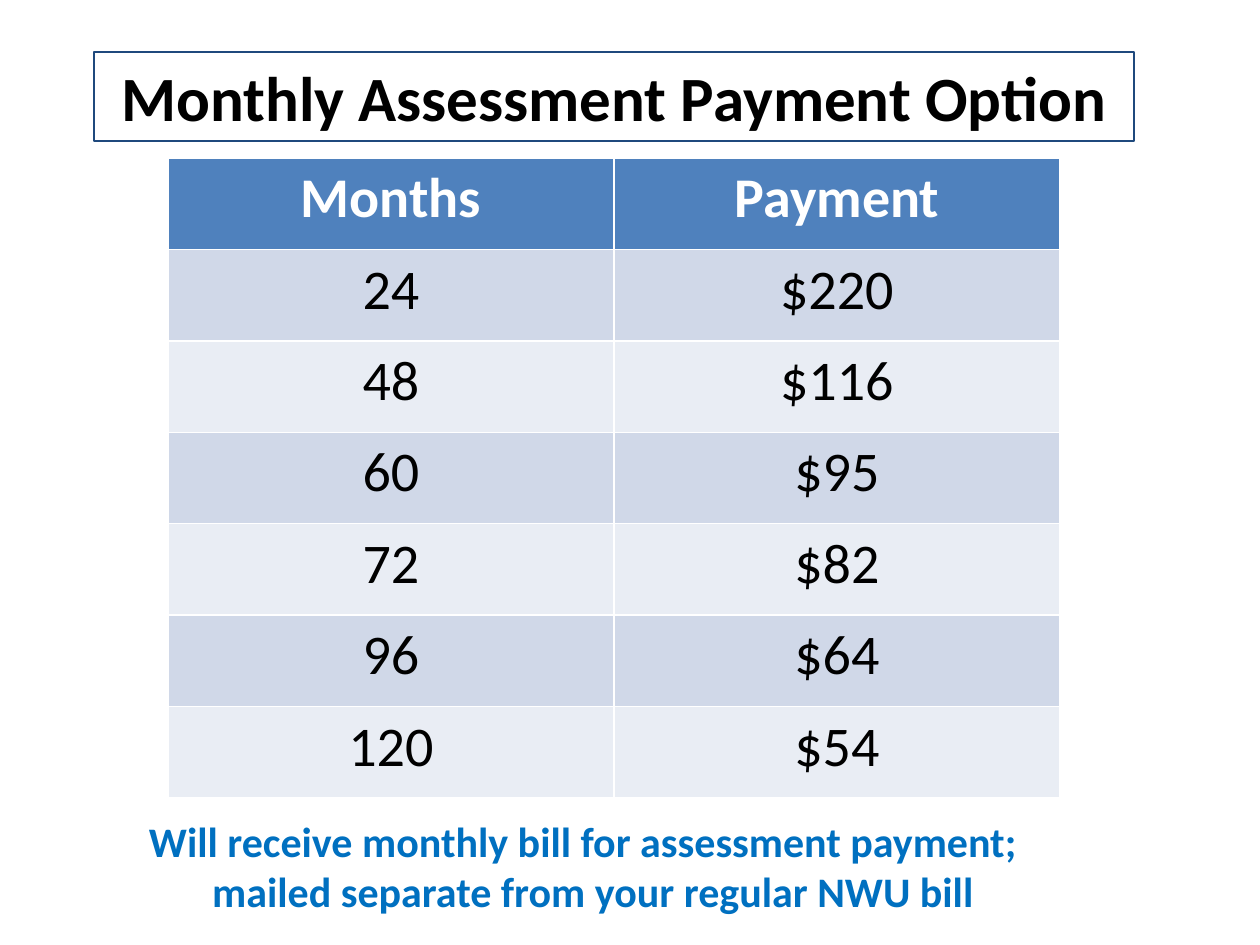
from dataclasses import dataclass

from pptx import Presentation
from pptx.dml.color import RGBColor
from pptx.enum.shapes import MSO_SHAPE as Shape
from pptx.enum.text import MSO_ANCHOR as Anchor, PP_ALIGN as Align
from pptx.util import Emu, Pt


@dataclass(frozen=True)
class Theme:
    font: str = "Calibri"
    title_size: int = 36
    table_size: int = 32
    note_size: int = 24
    black: str = "000000"
    white: str = "FFFFFF"
    outline: str = "1F497D"
    header: str = "4F81BD"
    bands: tuple = ("D0D8E8", "E9EDF4")
    note: str = "0070C0"


theme = Theme()


def px(count):
    return Emu(round(count * 914400 / 126))


def write(paragraph, text, size, color, bold=True):
    paragraph.text = text
    paragraph.alignment = Align.CENTER
    font = paragraph.font
    font.name, font.size, font.bold = theme.font, Pt(size), bold
    font.color.rgb = RGBColor.from_string(color)


presentation = Presentation()
presentation.slide_width, presentation.slide_height = px(1260), px(945)
slide = presentation.slides.add_slide(presentation.slide_layouts[6])

# Payment table; its default style draws the white rules
rows = [
    ("Months", "Payment"),
    ("24", "$220"),
    ("48", "$116"),
    ("60", "$95"),
    ("72", "$82"),
    ("96", "$64"),
    ("120", "$54"),
]
table = slide.shapes.add_table(len(rows), 2, px(168), px(158), px(892), px(640)).table
for row_index, row in enumerate(rows):
    is_header = row_index == 0
    fill = theme.header if is_header else theme.bands[(row_index - 1) % 2]
    color = theme.white if is_header else theme.black
    for column_index, text in enumerate(row):
        cell = table.cell(row_index, column_index)
        cell.fill.solid()
        cell.fill.fore_color.rgb = RGBColor.from_string(fill)
        write(cell.text_frame.paragraphs[0], text, theme.table_size, color, is_header)

# Outlined title
title = slide.shapes.add_shape(Shape.RECTANGLE, px(94), px(52), px(1040), px(89))
title.shadow.inherit = False
title.fill.background()
title.line.color.rgb = RGBColor.from_string(theme.outline)
title.line.width = Pt(0.75)
title.text_frame.vertical_anchor = Anchor.TOP
write(title.text_frame.paragraphs[0], "Monthly Assessment Payment Option",
      theme.title_size, theme.black)

# Billing note; the second line sits slightly right of the first
note = slide.shapes.add_textbox(px(74), px(809), px(1018), px(115)).text_frame
note.word_wrap = True
write(note.paragraphs[0], "Will receive monthly bill for assessment payment;",
      theme.note_size, theme.note)
second_line = note.add_paragraph()
write(second_line, "mailed separate from your regular NWU bill", theme.note_size, theme.note)
second_line._p.get_or_add_pPr().set("marL", str(px(20)))

presentation.save("out.pptx")
